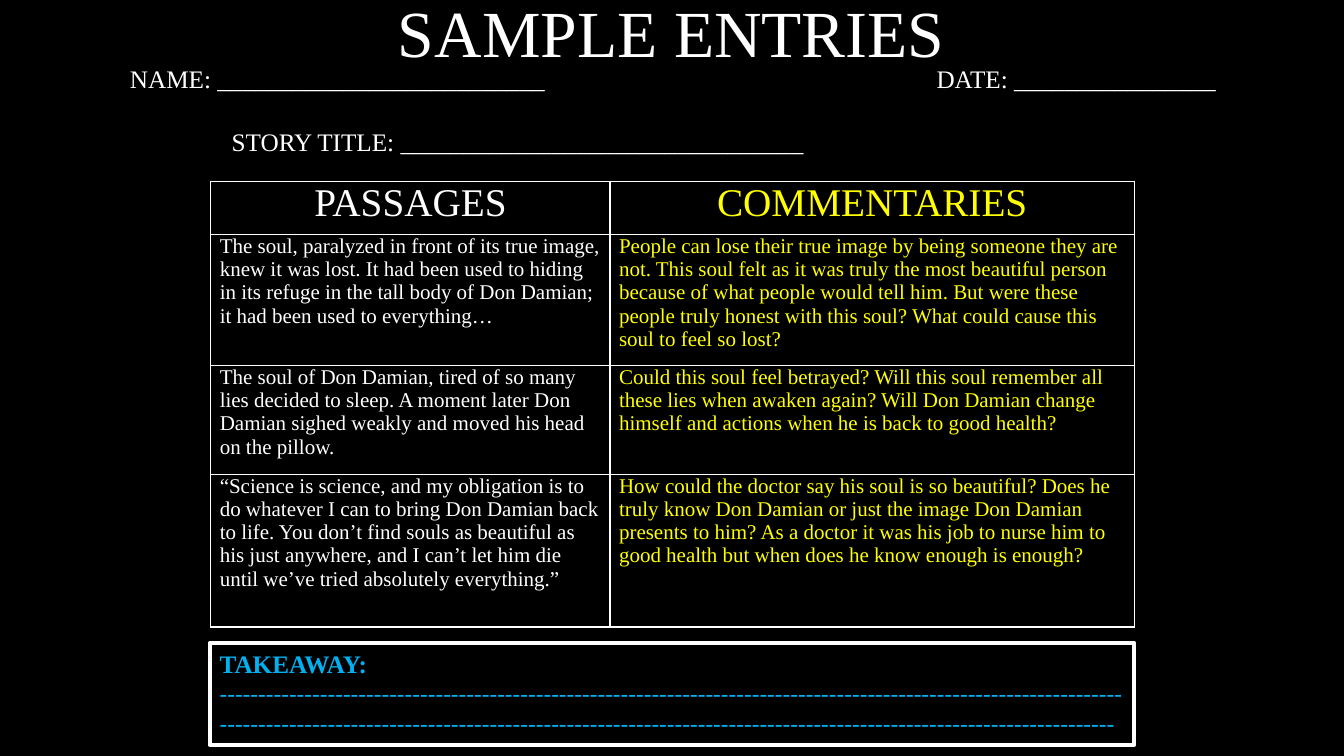
from dataclasses import dataclass

from lxml.etree import SubElement
from pptx import Presentation
from pptx.dml.color import RGBColor
from pptx.enum.shapes import MSO_SHAPE as Shape
from pptx.enum.text import MSO_ANCHOR as Anchor, PP_ALIGN as Align
from pptx.oxml.ns import qn
from pptx.util import Inches, Pt


@dataclass(frozen=True)
class Theme:
    black: str = "000000"
    white: str = "FFFFFF"
    yellow: str = "FFFF00"
    blue: str = "00B0F0"
    serif: str = "Times New Roman"
    sans: str = "Calibri"
    title: float = 47
    heading: float = 28
    label: float = 18
    body: float = 15


THEME = Theme()

TITLE = "SAMPLE ENTRIES"
NAME_AND_DATE = "NAME: " + "_" * 26 + "\t" + "DATE: " + "_" * 16
STORY_TITLE = "STORY TITLE: " + "_" * 32
TAKEAWAY = "TAKEAWAY: "
WRITING_LINE = "-" * 233

HEADINGS = ("PASSAGES", "COMMENTARIES")
ENTRIES = [
    ("The soul, paralyzed in front of its true image, knew it was lost. It had been used to "
     "hiding in its refuge in the tall body of Don Damian; it had been used to everything…",
     "People can lose their true image by being someone they are not. This soul felt as it was "
     "truly the most beautiful person because of what people would tell him. But were these "
     "people truly honest with this soul? What could cause this soul to feel so lost?"),
    ("The soul of Don Damian, tired of so many lies decided to sleep. A moment later Don Damian "
     "sighed weakly and moved his head on the pillow.",
     "Could this soul feel betrayed? Will this soul remember all these lies when awaken again? "
     "Will Don Damian change himself and actions when he is back to good health?"),
    ("“Science is science, and my obligation is to do whatever I can to bring Don Damian back to "
     "life. You don’t find souls as beautiful as his just anywhere, and I can’t let him die "
     "until we’ve tried absolutely everything.”",
     "How could the doctor say his soul is so beautiful? Does he truly know Don Damian or just "
     "the image Don Damian presents to him? As a doctor it was his job to nurse him to good "
     "health but when does he know enough is enough?"),
]
COLUMN_WIDTHS = (3.96, 5.2)
COLUMN_COLORS = (THEME.white, THEME.yellow)
ROW_HEIGHTS = (0.53, 1.3, 1.08, 1.51)


def add_span(para, text, size, color, font=THEME.serif, bold=False):
    span = para.add_run()
    span.text = text
    span.font.name = font
    span.font.size = Pt(size)
    span.font.bold = bold
    span.font.color.rgb = RGBColor.from_string(color)


def add_label(page, area, text, size=THEME.label):
    """Add a white text box and return its frame."""
    frame = page.shapes.add_textbox(*map(Inches, area)).text_frame
    frame.word_wrap = True
    add_span(frame.paragraphs[0], text, size, THEME.white)
    return frame


def add_borders(cell):
    properties = cell._tc.get_or_add_tcPr()
    for position, side in enumerate(("a:lnL", "a:lnR", "a:lnT", "a:lnB")):
        line = SubElement(properties, qn(side), w=str(Pt(1)))
        fill = SubElement(line, qn("a:solidFill"))
        SubElement(fill, qn("a:srgbClr"), val=THEME.white)
        properties.insert(position, line)


def add_entries(page):
    rows = [HEADINGS, *ENTRIES]
    area = (2.09, 1.8, sum(COLUMN_WIDTHS), sum(ROW_HEIGHTS))
    table = page.shapes.add_table(len(rows), len(HEADINGS), *map(Inches, area)).table
    table.horz_banding = False
    for column, width in zip(table.columns, COLUMN_WIDTHS):
        column.width = Inches(width)
    for row, height in zip(table.rows, ROW_HEIGHTS):
        row.height = Inches(height)
    for r, texts in enumerate(rows):
        for c, text in enumerate(texts):
            cell = table.cell(r, c)
            cell.margin_left = cell.margin_right = Inches(0.09)
            cell.margin_top = cell.margin_bottom = 0
            cell.fill.solid()
            cell.fill.fore_color.rgb = RGBColor.from_string(THEME.black)
            add_borders(cell)
            para = cell.text_frame.paragraphs[0]
            para.alignment = Align.CENTER if r == 0 else Align.LEFT
            size = THEME.heading if r == 0 else THEME.body
            add_span(para, text, size, COLUMN_COLORS[c])


def add_takeaway(page):
    box = page.shapes.add_shape(Shape.RECTANGLE, *map(Inches, (2.08, 6.38, 9.17, 1.01)))
    box.shadow.inherit = False
    box.fill.solid()
    box.fill.fore_color.rgb = RGBColor.from_string(THEME.black)
    box.line.color.rgb = RGBColor.from_string(THEME.white)
    box.line.width = Pt(3)
    box.text_frame.word_wrap = True
    box.text_frame.vertical_anchor = Anchor.TOP
    para = box.text_frame.paragraphs[0]
    para.alignment = Align.LEFT
    add_span(para, TAKEAWAY, THEME.label, THEME.blue, bold=True)
    add_span(para, WRITING_LINE, THEME.label, THEME.blue, THEME.sans)


def main():
    deck = Presentation()
    deck.slide_width, deck.slide_height = Inches(13.33), Inches(7.5)
    page = deck.slides.add_slide(deck.slide_layouts[6])
    page.background.fill.solid()
    page.background.fill.fore_color.rgb = RGBColor.from_string(THEME.black)

    title = add_label(page, (2.35, -0.26, 8.62, 1.02), TITLE, THEME.title)
    title.vertical_anchor = Anchor.BOTTOM
    title.paragraphs[0].alignment = Align.CENTER
    title.paragraphs[0].line_spacing = 0.9

    add_entries(page)
    add_takeaway(page)

    name_and_date = add_label(page, (1.19, 0.58, 11.91, 0.4), NAME_AND_DATE)
    tabs = SubElement(name_and_date.paragraphs[0]._p.get_or_add_pPr(), qn("a:tabLst"))
    SubElement(tabs, qn("a:tab"), pos=str(Inches(8)), algn="l")
    add_label(page, (2.2, 1.2, 9.16, 0.4), STORY_TITLE)

    deck.save("out.pptx")


if __name__ == "__main__":
    main()
